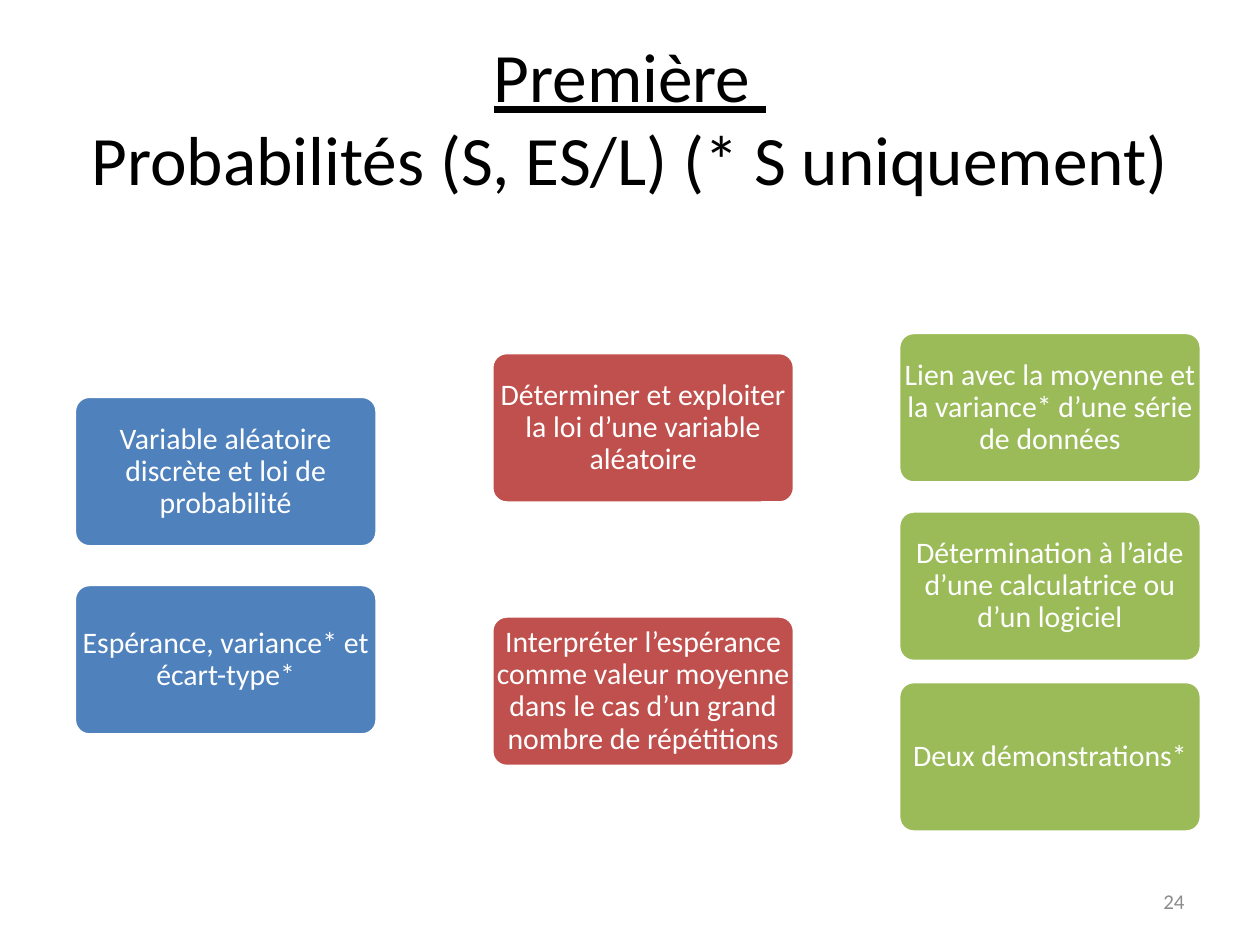
from pptx import Presentation
from pptx.dml.color import RGBColor
from pptx.enum import shapes, text
from pptx.util import Pt

TITLE = [("Première ", True), ("Probabilités (S, ES/L) (* S uniquement)", False)]
PAGE_NUMBER = "24"

# Each column: left edge, fill, then (top edge, wording) of its cards
COLUMNS = [
    (42.5, "4F81BD", [
        (226.5, "Variable aléatoire discrète et loi de probabilité"),
        (334, "Espérance, variance* et écart-type*"),
    ]),
    (281, "C0504D", [
        (201.5, "Déterminer et exploiter la loi d’une variable aléatoire"),
        (352, "Interpréter l’espérance comme valeur moyenne "
              "dans le cas d’un grand nombre de répétitions"),
    ]),
    (513.5, "9BBB59", [
        (190, "Lien avec la moyenne et la variance* d’une série de données"),
        (292, "Détermination à l’aide d’une calculatrice ou d’un logiciel"),
        (389.5, "Deux démonstrations*"),
    ]),
]
CARD_WIDTH, CARD_HEIGHT = 173, 86
FONT = "Calibri"


def rgb(code):
    return RGBColor.from_string(code)


def add_run(paragraph, wording, size, color, underline=None):
    run = paragraph.add_run()
    run.text = wording
    run.font.name = FONT
    run.font.size = Pt(size)
    run.font.color.rgb = rgb(color)
    run.font.underline = underline


def add_title(slide):
    title = slide.shapes.title
    title.left, title.top, title.width, title.height = Pt(36), Pt(21.6), Pt(648), Pt(90)
    frame = title.text_frame
    frame.word_wrap = True
    frame.auto_size = text.MSO_AUTO_SIZE.NONE
    frame.vertical_anchor = text.MSO_ANCHOR.MIDDLE
    paragraph = frame.paragraphs[0]
    paragraph.alignment = text.PP_ALIGN.CENTER
    for index, (wording, underline) in enumerate(TITLE):
        if index:
            paragraph.add_line_break()
        add_run(paragraph, wording, 39.6, "000000", underline)


def add_card(slide, left, top, fill, wording):
    card = slide.shapes.add_shape(
        shapes.MSO_SHAPE.ROUNDED_RECTANGLE,
        Pt(left), Pt(top), Pt(CARD_WIDTH), Pt(CARD_HEIGHT))
    card.adjustments[0] = 0.1
    card.shadow.inherit = False
    card.fill.solid()
    card.fill.fore_color.rgb = rgb(fill)
    card.line.color.rgb = rgb("FFFFFF")
    card.line.width = Pt(2)
    frame = card.text_frame
    frame.word_wrap = True
    frame.vertical_anchor = text.MSO_ANCHOR.MIDDLE
    frame.margin_left = frame.margin_right = frame.margin_top = frame.margin_bottom = 0
    paragraph = frame.paragraphs[0]
    paragraph.alignment = text.PP_ALIGN.CENTER
    paragraph.line_spacing = 0.9
    add_run(paragraph, wording, 17, "FFFFFF")


def add_page_number(slide):
    box = slide.shapes.add_textbox(Pt(516), Pt(500.5), Pt(168), Pt(28.75))
    frame = box.text_frame
    frame.word_wrap = True
    frame.vertical_anchor = text.MSO_ANCHOR.MIDDLE
    paragraph = frame.paragraphs[0]
    paragraph.alignment = text.PP_ALIGN.RIGHT
    add_run(paragraph, PAGE_NUMBER, 12, "8C8C8C")


def main():
    deck = Presentation()
    deck.slide_width, deck.slide_height = Pt(720), Pt(540)
    slide = deck.slides.add_slide(deck.slide_layouts[5])
    add_title(slide)
    for left, fill, cards in COLUMNS:
        for top, wording in cards:
            add_card(slide, left, top, fill, wording)
    add_page_number(slide)
    deck.save("out.pptx")


if __name__ == "__main__":
    main()
